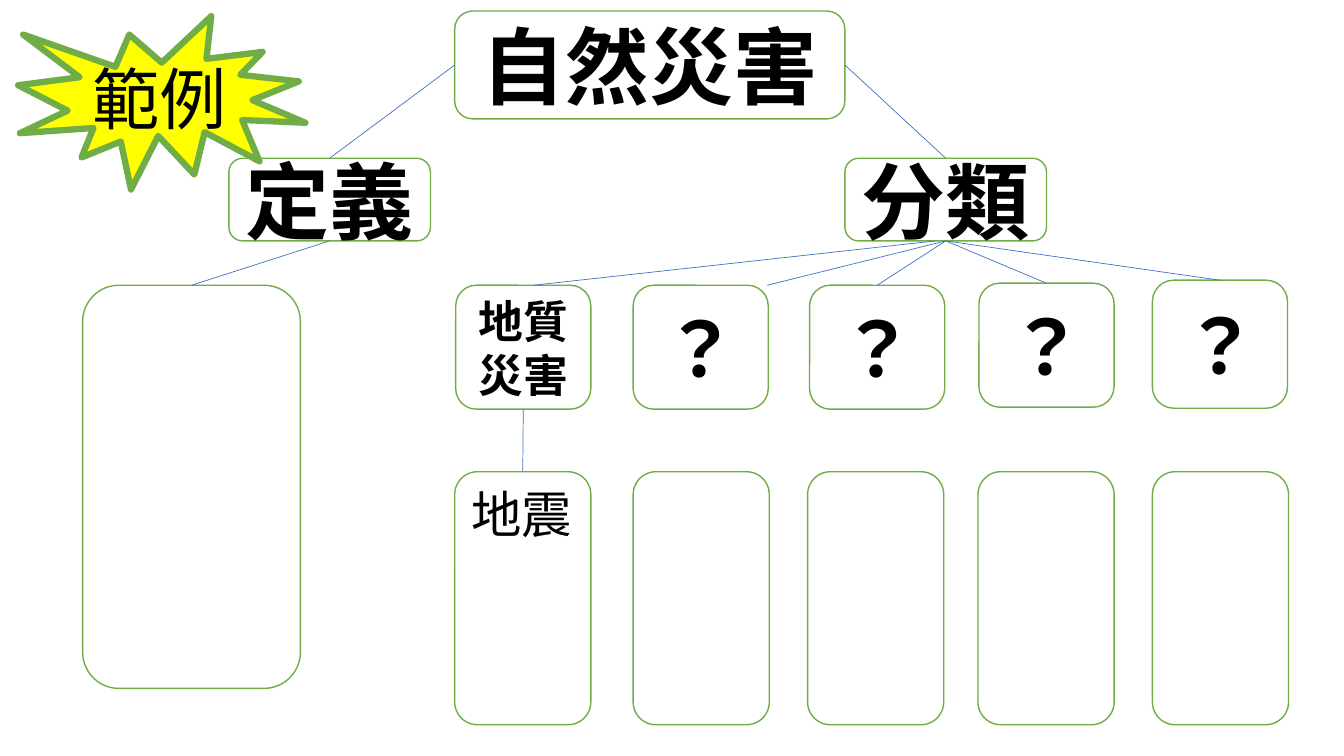
"""Build a concept map of natural disasters on one slide."""
from lxml import etree
from pptx import Presentation
from pptx.dml.color import RGBColor
from pptx.enum.shapes import MSO_CONNECTOR, MSO_SHAPE
from pptx.enum.text import MSO_ANCHOR, PP_ALIGN
from pptx.oxml.ns import qn
from pptx.util import Inches, Pt

ROUND = MSO_SHAPE.ROUNDED_RECTANGLE
BURST = MSO_SHAPE.EXPLOSION1
LINE = MSO_CONNECTOR.STRAIGHT
MIDDLE, TOP = MSO_ANCHOR.MIDDLE, MSO_ANCHOR.TOP
CENTER, LEFT = PP_ALIGN.CENTER, PP_ALIGN.LEFT
WHITE = RGBColor(0xFF, 0xFF, 0xFF)
BLACK = RGBColor(0, 0, 0)
GREEN = RGBColor(0x70, 0xAD, 0x47)
BLUE = RGBColor(0x44, 0x72, 0xC4)
YELLOW = RGBColor(0xFF, 0xFF, 0)
SANS, LATIN = "Noto Sans CJK JP", "Calibri"
COLS, ROWS = 1333, 750
CELL = Inches(0.01)

deck = Presentation()
deck.slide_width, deck.slide_height = COLS * CELL, ROWS * CELL
slide = deck.slides.add_slide(deck.slide_layouts[6])


def add_box(text, area, size=60, bold=True, font=SANS, kind=ROUND, fill=WHITE,
            width=1, anchor=MIDDLE, align=CENTER):
    box = slide.shapes.add_shape(kind, *(n * CELL for n in area))
    box.shadow.inherit = False
    box.fill.solid()
    box.fill.fore_color.rgb = fill
    box.line.color.rgb = GREEN
    box.line.width = Pt(width)
    if text:
        frame = box.text_frame
        frame.word_wrap = True
        frame.vertical_anchor = anchor
        para = frame.paragraphs[0]
        para.alignment = align
        run = para.add_run()
        run.text = text
        run.font.size, run.font.bold, run.font.name = Pt(size), bold, font
        run.font.color.rgb = BLACK
        if font == SANS:
            etree.SubElement(run.font._element, qn("a:ea"), typeface=font)
    return box


def add_link(start, end):
    link = slide.shapes.add_connector(LINE, 0, 0, 0, 0)
    link.line.color.rgb = BLUE
    link.line.width = Pt(0.5)
    etree.SubElement(link._element.spPr, qn("a:effectLst"))
    if isinstance(start[0], int):
        link.begin_x, link.begin_y = (n * CELL for n in start)
    else:
        link.begin_connect(*start)
    if isinstance(end[0], int):
        link.end_x, link.end_y = (n * CELL for n in end)
    else:
        link.end_connect(*end)


sense = add_box("定義", (227, 157, 200, 82))
types = add_box("分類", (838, 157, 200, 82))
title = add_box("自然災害", (451, 11, 387, 107))
blank = add_box("", (82, 283, 216, 400))

add_link((sense, 0), (title, 1))
add_link((title, 3), (types, 0))
add_link((sense, 2), (blank, 0))

heads = []
for left, top, high in [(452, 283, 123), (628, 283, 123), (803, 283, 123),
                        (971, 281, 123), (1143, 278, 127)]:
    first = not heads
    head = add_box("地質災害" if first else "？", (left, top, 134, high),
                   size=32 if first else 54)
    heads.append(head)

add_link((529, 283), (928, 239))
add_link((types, 2), (761, 283))
for head in heads[2:]:
    add_link((types, 2), (head, 0))

cases = [add_box("" if i else "地震", (left, 468, 135, 251), size=36, bold=False,
                 font=LATIN, anchor=TOP, align=LEFT)
         for i, left in enumerate((451, 628, 801, 970, 1143))]
add_link((heads[0], 2), (cases[0], 0))

add_box("範例", (18, 16, 285, 172), size=48, bold=False, font=LATIN,
        kind=BURST, fill=YELLOW, width=4.5)

deck.save("out.pptx")
